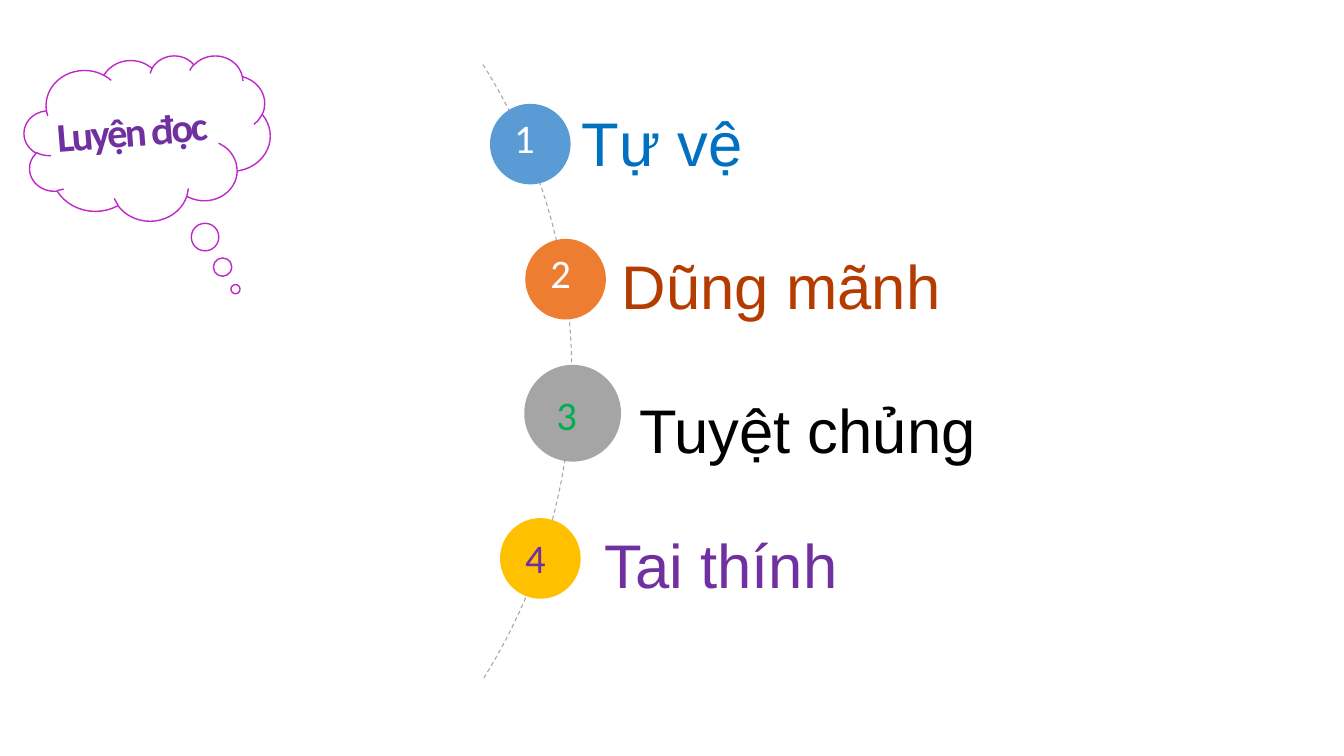
import math
from dataclasses import dataclass

import pptx
import pptx.dml.color
import pptx.enum.dml
import pptx.enum.shapes
import pptx.enum.text
import pptx.util

Inches = pptx.util.Inches
Pt = pptx.util.Pt
ALIGN = pptx.enum.text.PP_ALIGN
SHAPES = pptx.enum.shapes.MSO_SHAPE


@dataclass(frozen=True)
class Theme:
    label_font: str = "Arial"
    number_font: str = "Calibri"
    label_size: int = 44
    number_size: int = 29
    white: str = "FFFFFF"
    purple: str = "7030A0"
    cloud_line: str = "BF27CB"
    arc_line: str = "A6A6A6"


THEME = Theme()

# number, circle (centre x, centre y, diameter, fill), number (left, top, colour),
# word, word box (left, top, width), colour, alignment
WORDS = [
    ("1", (5.26, 1.43, 0.8, "5B9BD5"), (5.0, 1.07, THEME.white),
     "Tự vệ", (5.67, 0.62, 4.72), "0070C0", ALIGN.LEFT),
    ("2", (5.61, 2.77, 0.8, "ED7D31"), (5.36, 2.41, THEME.white),
     "Dũng mãnh", (6.07, 2.04, 4.11), "B43C00", ALIGN.LEFT),
    ("3", (5.68, 4.1, 0.96, "A5A5A5"), (5.42, 3.82, "00B050"),
     "Tuyệt chủng", (6.24, 3.47, 4.93), "000000", ALIGN.JUSTIFY),
    ("4", (5.36, 5.54, 0.8, "FFC000"), (5.11, 5.24, THEME.purple),
     "Tai thính", (5.9, 4.81, 4.87), THEME.purple, ALIGN.JUSTIFY),
]


def rgb(value):
    return pptx.dml.color.RGBColor.from_string(value)


def place(shape, left, top, width, height):
    shape.left, shape.top = Inches(left), Inches(top)
    shape.width, shape.height = Inches(width), Inches(height)


def write(shape, text, font_name, size, color, bold=False, spacing=0,
          alignment=ALIGN.LEFT, line_spacing=1.0):
    """Fill a shape with one formatted paragraph; spacing is in points."""
    frame = shape.text_frame
    frame.text = text
    frame.word_wrap = True
    frame.auto_size = pptx.enum.text.MSO_AUTO_SIZE.NONE
    frame.vertical_anchor = pptx.enum.text.MSO_ANCHOR.TOP
    paragraph = frame.paragraphs[0]
    paragraph.alignment = alignment
    paragraph.line_spacing = line_spacing
    font = paragraph.runs[0].font
    font.name, font.size, font.bold = font_name, Pt(size), bold
    font.color.rgb = rgb(color)
    if spacing:
        paragraph.runs[0]._r.get_or_add_rPr().set("spc", str(round(spacing * 100)))


def add_arc(slide, left, top, depth, height, steps=60):
    """Dashed circular arc that bulges to the right."""
    half = height / 2
    radius = (depth ** 2 + half ** 2) / (2 * depth)
    sweep = math.asin(half / radius)
    center_x, center_y = left + depth - radius, top + half
    angles = [sweep * (2 * step / steps - 1) for step in range(steps + 1)]
    points = [(Inches(center_x + radius * math.cos(angle)),
               Inches(center_y + radius * math.sin(angle))) for angle in angles]
    builder = slide.shapes.build_freeform(*points[0])
    builder.add_line_segments(points[1:], close=False)
    arc = builder.convert_to_shape()
    arc.shadow.inherit = False
    arc.fill.background()
    arc.line.color.rgb = rgb(THEME.arc_line)
    arc.line.width = Pt(0)
    arc.line.dash_style = pptx.enum.dml.MSO_LINE.DASH


def add_circle(slide, center_x, center_y, diameter, color):
    circle = slide.shapes.add_shape(
        SHAPES.OVAL, Inches(center_x - diameter / 2), Inches(center_y - diameter / 2),
        Inches(diameter), Inches(diameter))
    circle.shadow.inherit = False
    circle.fill.solid()
    circle.fill.fore_color.rgb = rgb(color)
    circle.line.fill.background()


def add_text(slide, left, top, width, height, *content, **formatting):
    box = slide.shapes.add_textbox(
        Inches(left), Inches(top), Inches(width), Inches(height))
    write(box, *content, **formatting)


def add_word(slide, number, circle, number_place, word, word_place, color, alignment):
    add_circle(slide, *circle)
    left, top, number_color = number_place
    add_text(slide, left, top, 0.45, 0.59, number, THEME.number_font,
             THEME.number_size, number_color, spacing=2.7)
    add_text(slide, *word_place, 1.21, word, THEME.label_font, THEME.label_size,
             color, alignment=alignment, line_spacing=1.5)


def add_cloud(slide):
    cloud = slide.shapes.add_shape(
        SHAPES.CLOUD_CALLOUT, Inches(0.24), Inches(0.55), Inches(2.44), Inches(1.64))
    cloud.adjustments[0], cloud.adjustments[1] = 0.359, 0.914
    cloud.shadow.inherit = False
    cloud.fill.solid()
    cloud.fill.fore_color.rgb = rgb(THEME.white)
    cloud.line.color.rgb = rgb(THEME.cloud_line)
    cloud.line.width = Pt(1)


def format_title(slide):
    title = slide.shapes.title
    place(title, 0.44, 0.98, 2.05, 0.61)
    title.rotation = 355.4
    write(title, "Luyện đọc", THEME.number_font, THEME.number_size, THEME.purple,
          bold=True, spacing=-1.8)
    frame = title.text_frame
    frame.margin_left = frame.margin_right = Inches(0.12)
    frame.margin_top = frame.margin_bottom = Inches(0.06)
    # Bring the title in front of the cloud
    slide.shapes._spTree.append(title._element)


def main():
    presentation = pptx.Presentation()
    presentation.slide_width = Inches(13.33)
    presentation.slide_height = Inches(7.5)
    slide = presentation.slides.add_slide(presentation.slide_layouts[5])

    # Arc with the numbered words
    add_arc(slide, 4.79, 0.64, 0.88, 6.1)
    for word in WORDS:
        add_word(slide, *word)

    # Title in a thought cloud
    add_cloud(slide)
    format_title(slide)

    presentation.save("out.pptx")


if __name__ == "__main__":
    main()
